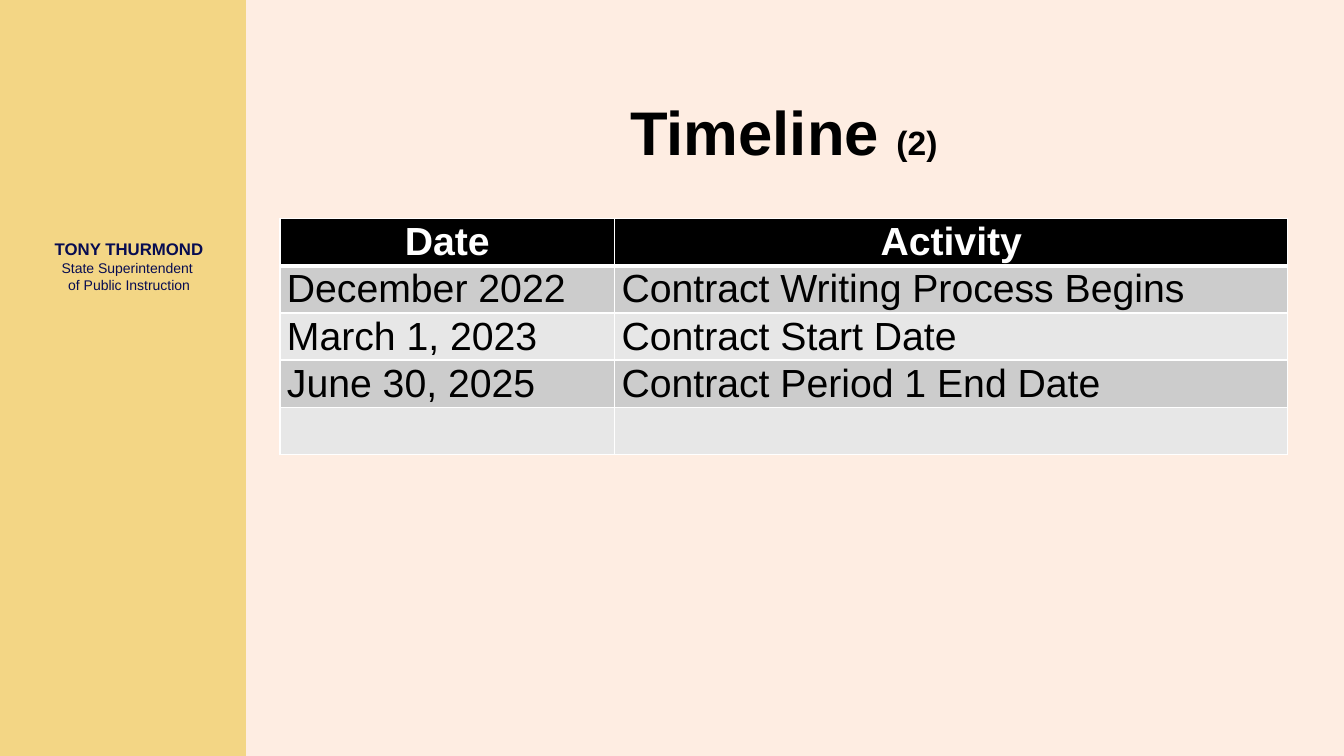
from dataclasses import dataclass

from lxml import etree
from pptx import Presentation
from pptx import util as u
from pptx.dml.color import RGBColor
from pptx.enum import shapes, text
from pptx.oxml import ns

WIDE, HIGH = u.Inches(13.333), u.Inches(7.5)
BLACK, WHITE, NAVY = "000000", "FFFFFF", "070C51"
CREAM, GOLD = "FEEDE2", "F3D685"
BANDS = ("CCCCCC", "E7E7E7")
SPLIT = (24.9, 50.1)  # column widths, percent of the slide
ROWS = (
    ("Date", "Activity"),
    ("December 2022", "Contract Writing Process Begins"),
    ("March 1, 2023", "Contract Start Date"),
    ("June 30, 2025", "Contract Period 1 End Date"),
    ("", ""),
)


@dataclass(frozen=True)
class Box:
    """A place in percent of the slide's width and height."""
    left: float
    top: float
    width: float
    height: float

    def place(self) -> tuple[int, int, int, int]:
        return (across(self.left), down(self.top),
                across(self.width), down(self.height))


@dataclass(frozen=True)
class Run:
    words: str
    size: int
    color: str
    bold: bool = False


@dataclass(frozen=True)
class Label:
    box: Box
    lines: tuple[tuple[Run, ...], ...]


LABELS = (
    Label(Box(2.63, 30.13, 13.95, 10.13), (
        (Run("TONY THURMOND", 12, NAVY, True),),
        (Run("State Superintendent ", 10, NAVY),),
        (Run("of Public Instruction", 10, NAVY),),
    )),
    Label(Box(20.83, 8.93, 75, 16.67), (
        (Run("Timeline ", 44, BLACK, True), Run("(2)", 24, BLACK, True)),
    )),
)
PANEL = Box(0, 0, 18.3, 100)
GRID = Box(20.83, 28.93, 75, 28.93)


def across(share: float) -> int:
    return round(WIDE * share / 100)


def down(share: float) -> int:
    return round(HIGH * share / 100)


def paint(fill, color: str) -> None:
    fill.solid()
    fill.fore_color.rgb = RGBColor.from_string(color)


def style(font, run: Run) -> None:
    look = {"name": "Arial", "size": u.Pt(run.size), "bold": run.bold}
    for key, value in look.items():
        setattr(font, key, value)
    font.color.rgb = RGBColor.from_string(run.color)


def write(para, run: Run) -> None:
    part = para.add_run()
    part.text = run.words
    style(part.font, run)


def draw_label(slide, label: Label) -> None:
    frame = slide.shapes.add_textbox(*label.box.place()).text_frame
    frame.word_wrap = True
    frame.vertical_anchor = text.MSO_ANCHOR.MIDDLE
    para = frame.paragraphs[0]
    para.alignment = text.PP_ALIGN.CENTER
    for index, line in enumerate(label.lines):
        if index:
            para.add_line_break()
        for run in line:
            write(para, run)


def edge(cell, row: int) -> None:
    """Draw white borders, thick between the header and the body."""
    thick = {"L": 1, "R": 1, "T": 3 if row == 1 else 1,
             "B": 3 if row == 0 else 1}
    props = cell._tc.get_or_add_tcPr()
    for side, points in thick.items():
        line = etree.SubElement(props, ns.qn(f"a:ln{side}"), w=str(u.Pt(points)))
        fill = etree.SubElement(line, ns.qn("a:solidFill"))
        etree.SubElement(fill, ns.qn("a:srgbClr"), val=WHITE)


def draw_cell(cell, words: str, row: int) -> None:
    head = row == 0
    look = {"margin_left": u.Inches(0.07), "margin_right": u.Inches(0.07),
            "margin_top": 0, "margin_bottom": 0,
            "vertical_anchor": text.MSO_ANCHOR.MIDDLE}
    for key, value in look.items():
        setattr(cell, key, value)
    edge(cell, row)
    paint(cell.fill, BLACK if head else BANDS[(row - 1) % 2])
    para = cell.text_frame.paragraphs[0]
    para.alignment = text.PP_ALIGN.CENTER if head else text.PP_ALIGN.LEFT
    run = Run(words, 28, WHITE if head else BLACK, head)
    if words:
        write(para, run)
    else:
        style(para.font, run)


def draw_table(slide) -> None:
    table = slide.shapes.add_table(len(ROWS), len(SPLIT), *GRID.place()).table
    for column, share in zip(table.columns, SPLIT):
        column.width = across(share)
    for row, line in enumerate(ROWS):
        for col, words in enumerate(line):
            draw_cell(table.cell(row, col), words, row)


def main() -> None:
    deck = Presentation()
    deck.slide_width, deck.slide_height = WIDE, HIGH
    slide = deck.slides.add_slide(deck.slide_layouts[6])
    paint(slide.background.fill, CREAM)
    panel = slide.shapes.add_shape(shapes.MSO_SHAPE.RECTANGLE, *PANEL.place())
    panel.shadow.inherit = False
    panel.line.fill.background()
    paint(panel.fill, GOLD)
    for label in LABELS:
        draw_label(slide, label)
    draw_table(slide)
    deck.save("out.pptx")


if __name__ == "__main__":
    main()
